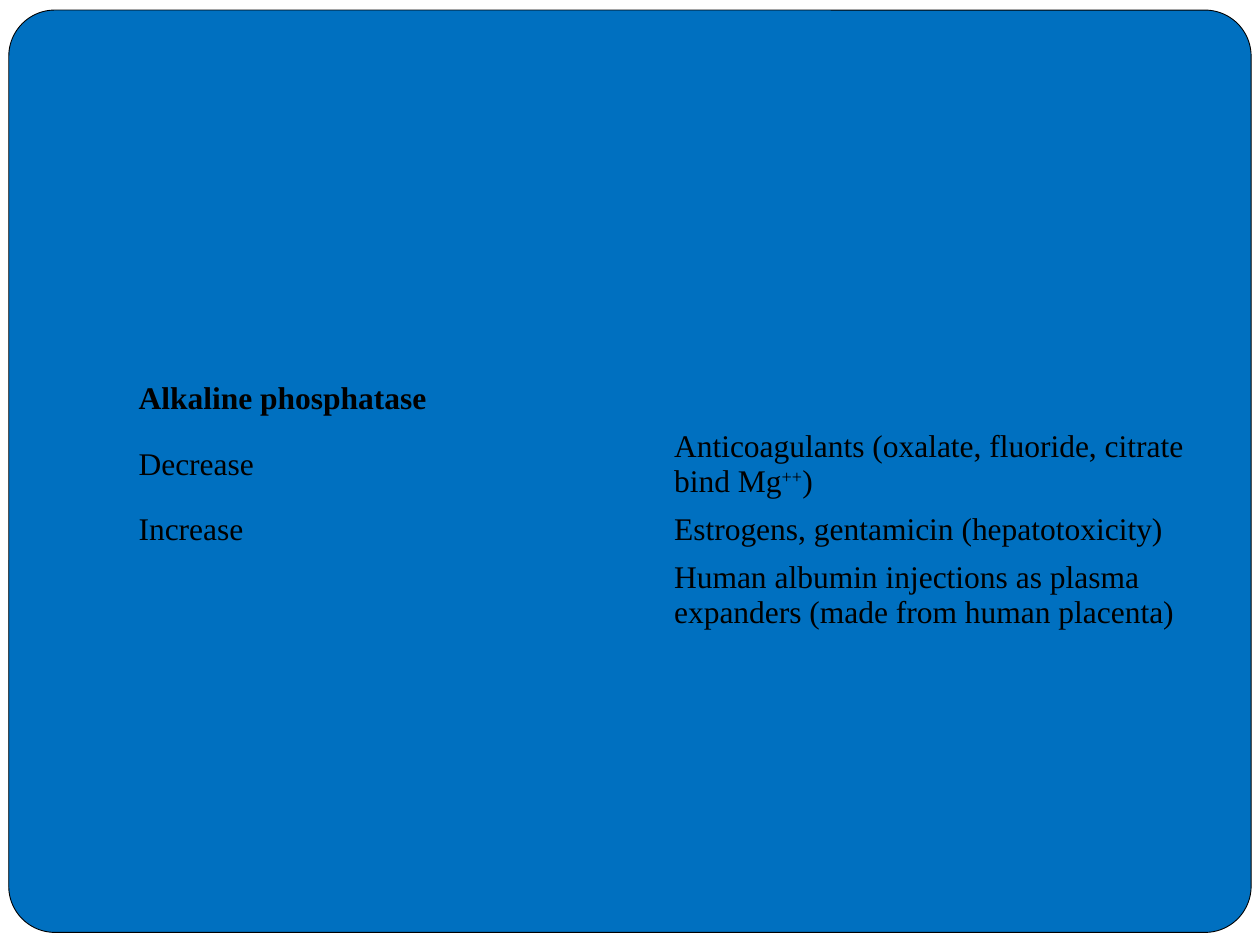
from pptx import Presentation
from pptx.dml.color import RGBColor
from pptx.enum.shapes import MSO_SHAPE as Shape
from pptx.enum.text import MSO_ANCHOR as Anchor, PP_ALIGN as Align
from pptx.util import Inches, Pt

FONT = "Times New Roman"
BLUE, BLACK, WHITE = "0070C0", "000000", "FFFFFF"
NO_STYLE_NO_GRID = "{2D5ABB26-0587-4C30-8999-92F81FD0307C}"

HEADING = "Alkaline phosphatase"
# Each cell is a list of (text, format) runs
EFFECTS = [
    ([("Decrease", {})],
     [("Anticoagulants (oxalate, fluoride, citrate bind Mg", {}),
      ("++", {"baseline": 30}), (")", {})]),
    ([("Increase", {})],
     [("Estrogens, gentamicin (hepatotoxicity)", {})]),
    ([],
     [("Human albumin injections as plasma expanders "
       "(made from human placenta)", {})]),
]
ROW_HEIGHTS = [0.37, 0.66, 0.37, 0.66]


def color(hex_string):
    return RGBColor.from_string(hex_string)


def add_text(paragraph, text, size=18, bold=False, fill=BLACK, baseline=0):
    run = paragraph.add_run()
    run.text = text
    run.font.name = FONT
    run.font.size = Pt(size)
    run.font.bold = bold
    run.font.color.rgb = color(fill)
    if baseline:
        run.font._element.set("baseline", str(baseline * 1000))


def add_panel(slide, kind, left, top, width, height, fill, line=None):
    shape = slide.shapes.add_shape(
        kind, Inches(left), Inches(top), Inches(width), Inches(height))
    shape.shadow.inherit = False
    shape.fill.solid()
    shape.fill.fore_color.rgb = color(fill)
    if line:
        shape.line.color.rgb = color(line)
        shape.line.width = Pt(0.5)
    else:
        shape.line.fill.background()
    return shape


def add_backdrop(slide, width, height):
    slide.background.fill.solid()
    slide.background.fill.fore_color.rgb = color(BLUE)
    add_panel(slide, Shape.RECTANGLE, 0, 0, width, height, WHITE)
    frame = add_panel(slide, Shape.ROUNDED_RECTANGLE, 0.07, 0.08,
                      width - 0.14, height - 0.18, BLUE, BLACK)
    frame.adjustments[0] = 0.05


def fill_cell(cell, runs):
    cell.fill.background()
    cell.vertical_anchor = Anchor.MIDDLE
    paragraph = cell.text_frame.paragraphs[0]
    paragraph.alignment = Align.LEFT
    for text, text_format in runs:
        add_text(paragraph, text, **text_format)


def add_effects_table(slide, left, top, width):
    rows = [([(HEADING, {"bold": True})], []), *EFFECTS]
    graphic = slide.shapes.add_table(
        len(rows), 2, Inches(left), Inches(top),
        Inches(width), Inches(sum(ROW_HEIGHTS)))
    table = graphic.table
    table.first_row = table.horz_banding = False
    table._tbl.tblPr[0].text = NO_STYLE_NO_GRID
    for row, height in zip(table.rows, ROW_HEIGHTS):
        row.height = Inches(height)
    for row, contents in zip(table.rows, rows):
        for cell, runs in zip(row.cells, contents):
            fill_cell(cell, runs)
    # The heading spans both columns
    table.cell(0, 0).merge(table.cell(0, 1))


def main():
    presentation = Presentation()
    presentation.slide_width = Inches(10)
    presentation.slide_height = Inches(7.5)
    slide = presentation.slides.add_slide(presentation.slide_layouts[6])
    add_backdrop(slide, 10, 7.5)
    add_effects_table(slide, 1, 2.98, 8.5)
    presentation.save("out.pptx")


if __name__ == "__main__":
    main()
